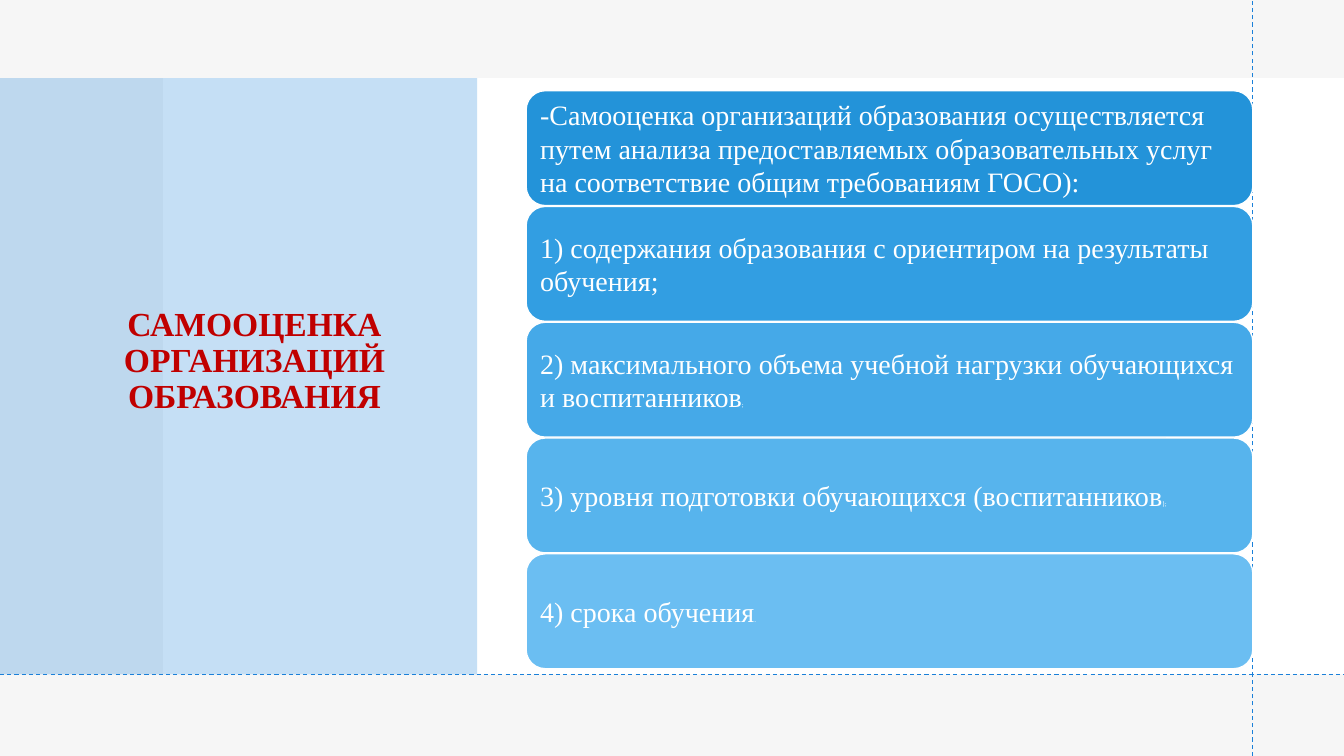
from typing import NamedTuple

from lxml import etree
from pptx import Presentation
from pptx.dml.color import RGBColor
from pptx.enum.dml import MSO_LINE
from pptx.enum.shapes import MSO_CONNECTOR, MSO_SHAPE
from pptx.enum.text import MSO_ANCHOR, PP_ALIGN
from pptx.oxml.ns import qn
from pptx.shapes.autoshape import Shape
from pptx.slide import Slide
from pptx.text.text import _Paragraph
from pptx.util import Pt

RECTANGLE = MSO_SHAPE.RECTANGLE
ROUNDED = MSO_SHAPE.ROUNDED_RECTANGLE
STRAIGHT = MSO_CONNECTOR.STRAIGHT
DASH = MSO_LINE.DASH
MIDDLE = MSO_ANCHOR.MIDDLE
LEFT, CENTER = PP_ALIGN.LEFT, PP_ALIGN.CENTER

SLIDE_WIDTH, SLIDE_HEIGHT = 960, 540
SERIF, SANS = "Times New Roman", "Calibri"
WHITE, PALE_GREY, BLUE, RED = "FFFFFF", "F6F6F6", "1A80D9", "C00000"

CARD_LEFT, CARD_TOP = 375.8, 64.8
CARD_WIDTH, CARD_HEIGHT, CARD_PITCH = 519.1, 82.1, 82.7
CARD_INSET = 6


class Box(NamedTuple):
    left: float
    top: float
    width: float
    height: float


class Card(NamedTuple):
    fill: str
    text: str
    ending: str = ""


CARDS = [
    Card("2393D9", "-Самооценка организаций образования осуществляется путем анализа "
                   "предоставляемых образовательных услуг на соответствие общим требованиям ГОСО):"),
    Card("329EE2", "1) содержания образования с ориентиром на результаты обучения;"),
    Card("45A9E8", "2) максимального объема учебной нагрузки обучающихся и воспитанников", ";"),
    Card("57B4ED", "3) уровня подготовки обучающихся (воспитанников", ");"),
    Card("6BBEF2", "4) срока обучения", "."),
]


def color(value: str) -> RGBColor:
    return RGBColor.from_string(value)


def add_block(slide: Slide, kind: MSO_SHAPE, box: Box, fill: str) -> Shape:
    shape = slide.shapes.add_shape(kind, *map(Pt, box))
    shape.shadow.inherit = False
    shape.fill.solid()
    shape.fill.fore_color.rgb = color(fill)
    shape.line.fill.background()
    return shape


def set_opacity(shape: Shape, percent: int) -> None:
    fill_color = shape._element.spPr.find(qn("a:solidFill"))[0]
    etree.SubElement(fill_color, qn("a:alpha")).set("val", str(percent * 1000))


def add_run(paragraph: _Paragraph, text: str, font: str, size: float,
            fill: str, bold: bool = False) -> None:
    run = paragraph.add_run()
    run.text = text
    run.font.name = font
    run.font.size = Pt(size)
    run.font.bold = bold
    run.font.color.rgb = color(fill)


def add_guide(slide: Slide, start: tuple[float, float], end: tuple[float, float]) -> None:
    """Draw a thin dashed line across the slide."""
    connector = slide.shapes.add_connector(STRAIGHT, *map(Pt, start + end))
    connector.line.color.rgb = color(BLUE)
    connector.line.width = Pt(0.75)
    connector.line.dash_style = DASH
    etree.SubElement(connector._element.spPr, qn("a:effectLst"))


def add_title(slide: Slide, box: Box, text: str) -> None:
    frame = slide.shapes.add_textbox(*map(Pt, box)).text_frame
    frame.word_wrap = True
    frame.vertical_anchor = MIDDLE
    paragraph = frame.paragraphs[0]
    paragraph.alignment = CENTER
    paragraph.line_spacing = 0.9
    add_run(paragraph, text, SERIF, 24, RED, bold=True)


def add_card(slide: Slide, index: int, card: Card) -> None:
    box = Box(CARD_LEFT, CARD_TOP + index * CARD_PITCH, CARD_WIDTH, CARD_HEIGHT)
    shape = add_block(slide, ROUNDED, box, card.fill)
    shape.line.color.rgb = color(WHITE)
    shape.line.width = Pt(1)
    frame = shape.text_frame
    frame.word_wrap = True
    frame.vertical_anchor = MIDDLE
    frame.margin_left = frame.margin_right = Pt(CARD_INSET)
    frame.margin_top = frame.margin_bottom = Pt(CARD_INSET)
    paragraph = frame.paragraphs[0]
    paragraph.alignment = LEFT
    add_run(paragraph, card.text, SERIF, 20, WHITE)
    if card.ending:
        add_run(paragraph, card.ending, SANS, 5, WHITE)


def main() -> None:
    presentation = Presentation()
    presentation.slide_width = Pt(SLIDE_WIDTH)
    presentation.slide_height = Pt(SLIDE_HEIGHT)
    slide = presentation.slides.add_slide(presentation.slide_layouts[6])
    slide.background.fill.solid()
    slide.background.fill.fore_color.rgb = color(PALE_GREY)

    add_block(slide, RECTANGLE, Box(116.6, 55.8, 843.4, 426), WHITE)
    title_panel = add_block(slide, RECTANGLE, Box(0, 55.8, 340.8, 426), BLUE)
    set_opacity(title_panel, 25)
    add_title(slide, Box(39.6, 53.3, 284.4, 409.7), "САМООЦЕНКА ОРГАНИЗАЦИЙ ОБРАЗОВАНИЯ")
    add_guide(slide, (895, SLIDE_HEIGHT), (895, 0))
    add_guide(slide, (0, 481.7), (SLIDE_WIDTH, 481.7))
    for index, card in enumerate(CARDS):
        add_card(slide, index, card)

    presentation.save("out.pptx")


if __name__ == "__main__":
    main()
